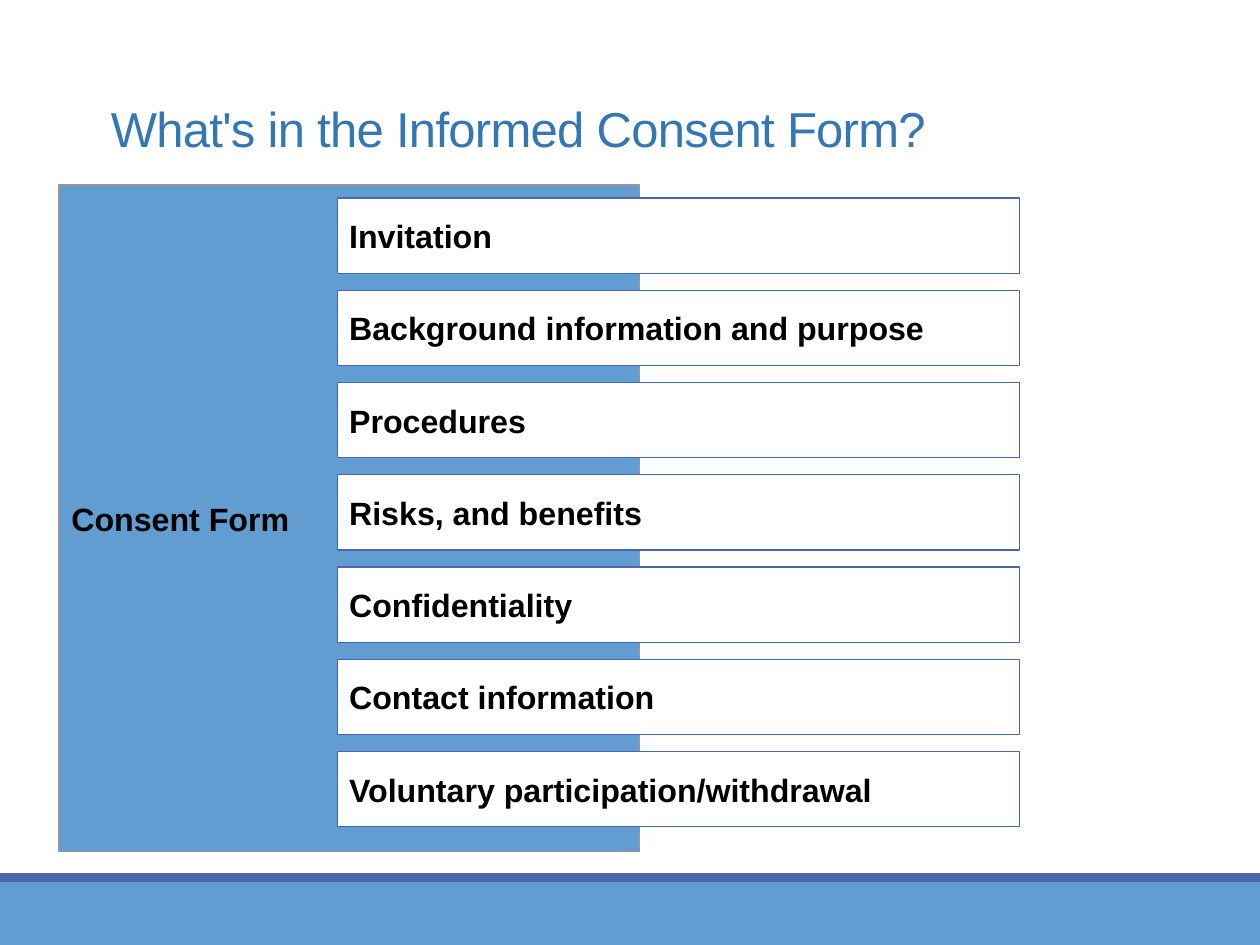
from pptx import Presentation
from pptx.dml.color import RGBColor
from pptx.enum.shapes import MSO_SHAPE
from pptx.enum.text import MSO_ANCHOR, PP_ALIGN
from pptx.util import Cm, Pt

RECT = MSO_SHAPE.RECTANGLE
MID = MSO_ANCHOR.MIDDLE
LEFT = PP_ALIGN.LEFT
SKY, NAVY, WHITE, BLACK = "629DD1", "4A66AC", "FFFFFF", "000000"
LABEL = {"name": "Arial", "size": Pt(18.4), "bold": True}
HEAD = {"name": "Arial", "size": Pt(28), "bold": False}


def write(shape, text, form, color):
    frame = shape.text_frame
    frame.word_wrap = True
    frame.vertical_anchor = MID
    para = frame.paragraphs[0]
    para.alignment = LEFT
    run = para.add_run()
    run.text = text
    for key, value in form.items():
        setattr(run.font, key, value)
    run.font.color.rgb = RGBColor.from_string(color)
    return para


def block(x, y, w, h, fill, line=None):
    shape = slide.shapes.add_shape(RECT, Cm(x), Cm(y), Cm(w), Cm(h))
    shape.shadow.inherit = False
    shape.fill.solid()
    shape.fill.fore_color.rgb = RGBColor.from_string(fill)
    if line:
        shape.line.color.rgb = RGBColor.from_string(line)
        shape.line.width = Pt(0.75)
    else:
        shape.line.fill.background()
    return shape


deck = Presentation()
deck.slide_width, deck.slide_height = Cm(25.4), Cm(19.05)
slide = deck.slides.add_slide(deck.slide_layouts[5])

# Footer bands
block(0, 17.78, 25.4, 1.27, SKY)
block(0, 17.6, 25.4, 0.18, NAVY)

# Title
title = slide.shapes.title
title.left, title.top, title.width, title.height = Cm(1.98), Cm(1.07), Cm(21.34), Cm(3.2)
para = write(title, "What's in the Informed Consent Form?", HEAD, "3477B2")
para.line_spacing = 0.85
para.runs[0].font._element.set("spc", "-40")

# Panel behind the list
panel = block(1.19, 3.73, 11.71, 13.44, SKY, "9D90A0")
write(panel, "Consent Form", LABEL, BLACK)

# Parts of the form, evenly spaced
parts = ["Invitation", "Background information and purpose", "Procedures",
         "Risks, and benefits", "Confidentiality", "Contact information",
         "Voluntary participation/withdrawal"]
for i, part in enumerate(parts):
    card = block(6.81, 3.99 + i * 1.86, 13.74, 1.52, WHITE, NAVY)
    write(card, part, LABEL, BLACK)
    for side in ("left", "top", "right", "bottom"):
        setattr(card.text_frame, "margin_" + side, Cm(0.23))

deck.save("out.pptx")
